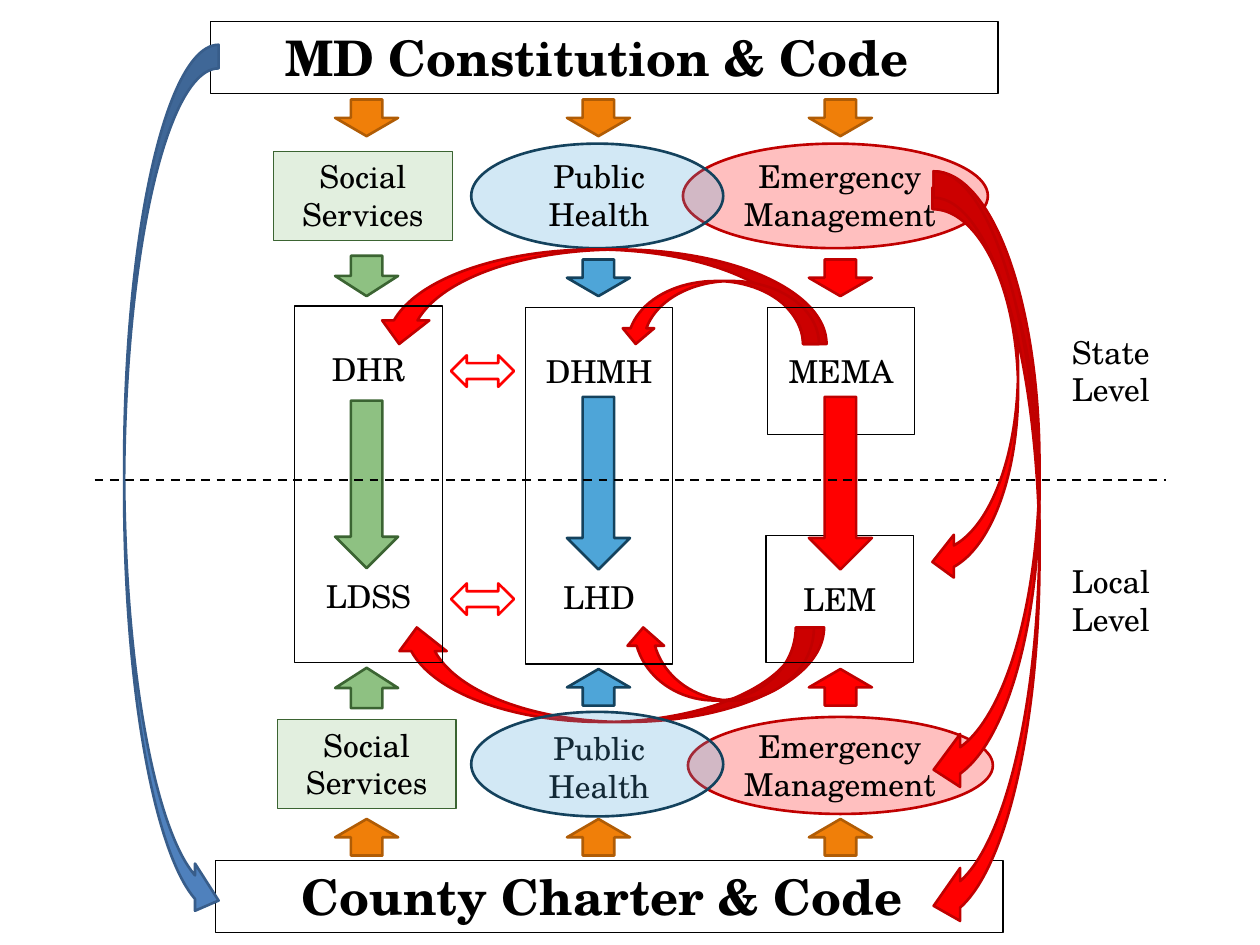
"""Build a slide on state and local authority for emergency management."""
from lxml import etree
from pptx import Presentation, util as u
from pptx.dml.color import RGBColor
from pptx.enum import dml, shapes, text
from pptx.oxml.ns import qn

PX = 9144
FONT = "TeX Gyre Schola"
KIND = shapes.MSO_SHAPE

# style: fill, fill opacity in percent, line colour, line width
STYLES = {
    "frame": (None, 100, "000000", 0.75),
    "plain": (None, 100, None, 0),
    "tint green": ("8EC182", 25, "3B6432", 0.75),
    "tint blue": ("4EA5D8", 25, "14425D", 1.5),
    "tint red": ("FF0000", 25, "C00000", 1.5),
    "green": ("8EC182", 100, "3B6432", 1.5),
    "blue": ("4EA5D8", 100, "14425D", 1.5),
    "red": ("FF0000", 100, "C00000", 1.5),
    "orange": ("F07F09", 100, "B05C05", 1.5),
    "navy": ("4F81BD", 100, "385D8A", 1.5),
    "outline red": (None, 100, "FF0000", 1.5),
}

# style, left, top, width, height
BACK_ELLIPSES = [
    ("tint red", 546, 569, 242, 77),
    ("tint red", 542, 114, 242, 83),
    ("tint blue", 374, 114, 200, 83),
]
FRONT_ELLIPSES = [("tint blue", 374, 565, 200, 83)]

# kind, style, left, top, width, height, rotation
INNER_CURVES = [
    (KIND.CURVED_UP_ARROW, "red", 298, 198, 358, 75, 180),
    (KIND.CURVED_UP_ARROW, "red", 492, 223, 158, 50, 180),
    (KIND.CURVED_DOWN_ARROW, "red", 312, 498, 342, 75, 180),
    (KIND.CURVED_DOWN_ARROW, "red", 496, 498, 150, 58, 180),
]
OUTER_CURVES = [
    (KIND.CURVED_UP_ARROW, "navy", -213, 347, 698, 75, 90),
    (KIND.CURVED_DOWN_ARROW, "red", 535, 342, 496, 84, 90),
    (KIND.CURVED_DOWN_ARROW, "red", 617, 272, 314, 68, 90),
    (KIND.CURVED_DOWN_ARROW, "red", 481, 396, 604, 84, 90),
]

# style, left, then (top, height) of the upper, long and lower arrow
COLUMNS = [
    ("green", 266, (203, 32), (318, 133), (530, 32)),
    ("blue", 450, (206, 29), (315, 137), (531, 29)),
    ("red", 642, (206, 29), (315, 137), (531, 29)),
]
ARROW_WIDTH = 50
LAW_ARROWS = [(79, 0), (650, 180)]
EXCHANGE_TOPS = [282, 463]

# paragraphs, style, left, top, width, height
AGENCIES = [
    (["DHR", "LDSS"], "frame", 234, 243, 117, 283),
    (["DHMH", "LHD"], "frame", 417, 244, 117, 283),
    (["MEMA"], "frame", 609, 244, 117, 101),
    (["LEM"], "frame", 608, 425, 117, 101),
]
LAWS = [
    (["MD Constitution & Code "], "frame", 167, 17, 625, 57),
    (["County Charter & Code "], "frame", 171, 683, 625, 57),
]
FIELDS = [
    (["Social Services"], "tint green", 217, 120, 142, 71),
    (["Public Health"], "plain", 417, 120, 117, 71),
    (["Emergency Management"], "plain", 575, 120, 183, 71),
    (["Social Services"], "tint green", 220, 571, 142, 71),
    (["Public Health"], "plain", 417, 574, 117, 71),
    (["Emergency Management"], "plain", 575, 572, 183, 71),
]
LEVELS = [
    (["State Level"], "plain", 841, 259, 97, 71),
    (["Local", "Level"], "plain", 841, 441, 100, 71),
]


def color(value):
    """Return a colour from a hex string."""
    return RGBColor.from_string(value)


def add_shape(page, kind, style, left, top, width, height, rotation=0):
    """Add a preset shape in one of the styles."""
    fill, opacity, line, weight = STYLES[style]
    shape = page.shapes.add_shape(kind, *(v * PX for v in (left, top, width, height)))
    shape.rotation = rotation
    shape.shadow.inherit = False
    if fill:
        shape.fill.solid()
        shape.fill.fore_color.rgb = color(fill)
        if opacity < 100:
            tone = shape.fill._xPr.find(".//" + qn("a:srgbClr"))
            etree.SubElement(tone, qn("a:alpha"), val=str(opacity * 1000))
    else:
        shape.fill.background()
    if line:
        shape.line.color.rgb = color(line)
        shape.line.width = u.Pt(weight)
    else:
        shape.line.fill.background()
    return shape


def add_label(page, lines, style, *place, size=18, bold=False, inset=5, gap=0,
              align=text.PP_ALIGN.CENTER):
    """Add a rectangle or a plain text box with its paragraphs."""
    if style == "plain":
        box = page.shapes.add_textbox(*(v * PX for v in place))
    else:
        box = add_shape(page, KIND.RECTANGLE, style, *place)
    frame = box.text_frame
    frame.word_wrap = True
    frame.vertical_anchor = text.MSO_ANCHOR.TOP
    frame.margin_top = inset * PX
    frame.text = "\n".join(lines)
    for index, para in enumerate(frame.paragraphs):
        para.alignment = align
        para.space_before = u.Pt(gap if index else 0)
        para.font.name = FONT
        para.font.size = u.Pt(size)
        para.font.bold = bold
        para.font.color.rgb = color("000000")


def add_divider(page):
    """Add the dashed line between state and local level."""
    line = page.shapes.add_connector(
        shapes.MSO_CONNECTOR.STRAIGHT, *(v * PX for v in (75, 381, 925, 381)))
    line.line.color.rgb = color("000000")
    line.line.width = u.Pt(1.25)
    line.line.dash_style = dml.MSO_LINE.DASH
    etree.SubElement(line._element.spPr, qn("a:effectLst"))


def add_arrows(page):
    """Add the block arrows of each column and the exchange arrows."""
    for style, left, upper, long, lower in COLUMNS:
        for (top, height), turn in ((upper, 0), (long, 0), (lower, 180)):
            add_shape(page, KIND.DOWN_ARROW, style, left, top, ARROW_WIDTH, height, turn)
        for top, turn in LAW_ARROWS:
            add_shape(page, KIND.DOWN_ARROW, "orange", left, top, ARROW_WIDTH, 29, turn)
    for top in EXCHANGE_TOPS:
        add_shape(page, KIND.LEFT_RIGHT_ARROW, "outline red", 358, top, ARROW_WIDTH, 25)


def main():
    """Build and save the deck."""
    deck = Presentation()
    deck.slide_width, deck.slide_height = 1000 * PX, 750 * PX
    page = deck.slides.add_slide(deck.slide_layouts[6])
    for ellipse in BACK_ELLIPSES:
        add_shape(page, KIND.OVAL, *ellipse)
    for curve in INNER_CURVES:
        add_shape(page, *curve)
    for agency in AGENCIES:
        add_label(page, *agency, inset=35, gap=108)
    for law in LAWS:
        add_label(page, *law, size=28, bold=True)
    add_arrows(page)
    for field in FIELDS:
        add_label(page, *field)
    for level in LEVELS:
        add_label(page, *level, align=text.PP_ALIGN.LEFT)
    add_divider(page)
    for ellipse in FRONT_ELLIPSES:
        add_shape(page, KIND.OVAL, *ellipse)
    for curve in OUTER_CURVES:
        add_shape(page, *curve)
    deck.save("out.pptx")


if __name__ == "__main__":
    main()
